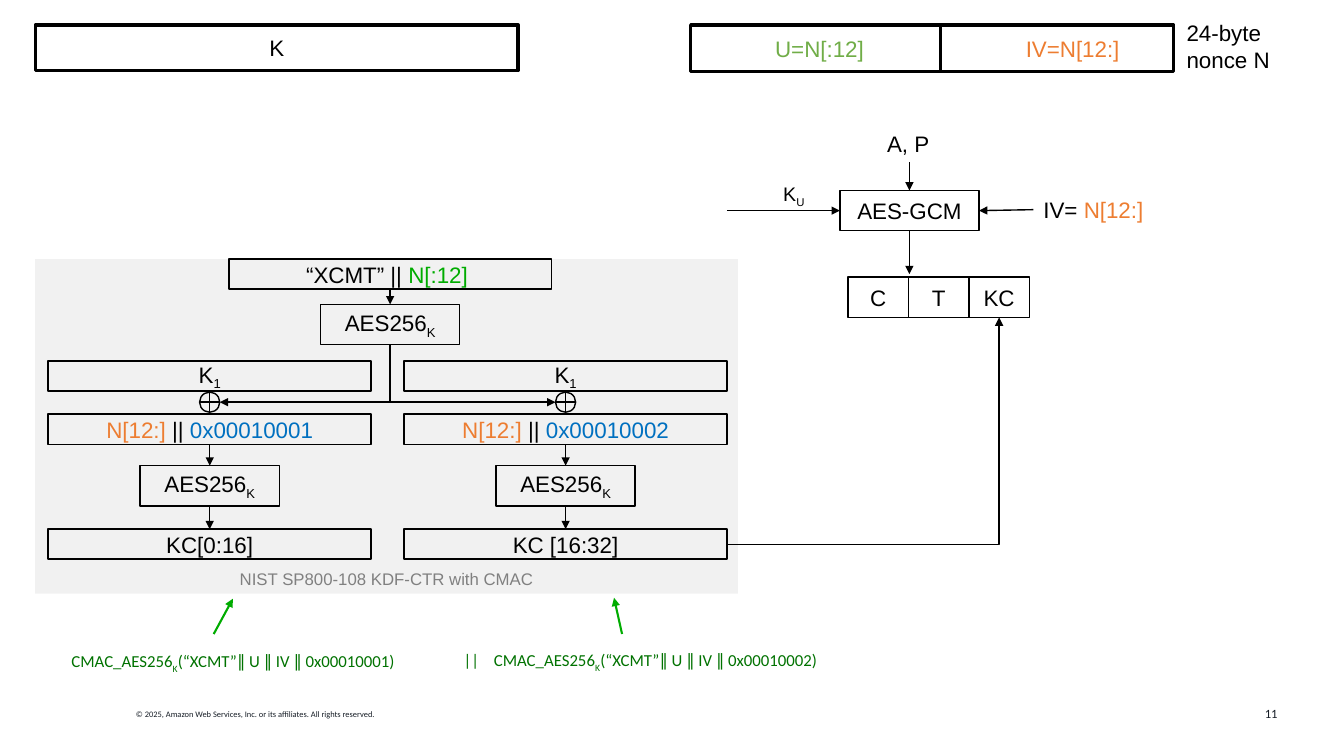
"""Build the slide on key commitment with a CMAC-based key derivation."""
from dataclasses import dataclass

from lxml import etree
from pptx import Presentation
from pptx import util as u
from pptx.dml.color import RGBColor
from pptx.enum import shapes, text
from pptx.oxml import ns


@dataclass(frozen=True)
class Theme:
    black: str = "000000"
    gray: str = "808080"
    ink: str = "161D26"
    orange: str = "ED7D31"
    olive: str = "70AD47"
    green: str = "00AC00"
    dark_green: str = "007200"
    blue: str = "0070C0"
    sans: str = "Arial"
    note: str = "Calibri"
    body: float = 16
    key: float = 14
    caption: float = 12
    number: float = 9
    legal: float = 6
    thick: float = 2.5
    medium: float = 1.25
    thin: float = 1


theme = Theme()
align, anchors = text.PP_ALIGN, text.MSO_ANCHOR
kinds, links = shapes.MSO_SHAPE, shapes.MSO_CONNECTOR

presentation = Presentation()
presentation.slide_width = u.Inches(13.33)
presentation.slide_height = u.Inches(7.5)
slide = presentation.slides.add_slide(presentation.slide_layouts[6])


def place(runs, at, *, kind=None, line=None, fill=None, size=theme.body, font=theme.sans,
          alignment=align.CENTER, anchor=anchors.MIDDLE, wrap=True, tabs=()):
    """Add a shape, or a text box when kind is None, holding (text, color, subscript) runs."""
    box = [u.Inches(value) for value in at]
    if kind is None:
        shape = slide.shapes.add_textbox(*box)
    else:
        shape = slide.shapes.add_shape(kind, *box)
        shape.shadow.inherit = False
        shape.fill.background()
        shape.line.fill.background()
    if line:
        shape.line.color.rgb = RGBColor.from_string(theme.black)
        shape.line.width = u.Pt(line)
    if fill:
        shape.fill.solid()
        shape.fill.fore_color.rgb = RGBColor.from_string(fill)
    frame = shape.text_frame
    frame.word_wrap = wrap
    frame.vertical_anchor = anchor
    paragraph = frame.paragraphs[0]
    paragraph.alignment = alignment
    if tabs:
        stops = etree.SubElement(paragraph._p.get_or_add_pPr(), ns.qn("a:tabLst"))
        for position, side in tabs:
            etree.SubElement(stops, ns.qn("a:tab"), pos=str(u.Inches(position)), algn=side)
    for words, color, *subscript in runs:
        if words == "\n":
            paragraph = frame.add_paragraph()
            paragraph.alignment = alignment
            continue
        run = paragraph.add_run()
        run.text = words
        run.font.name = font
        run.font.size = u.Pt(size)
        run.font.color.rgb = RGBColor.from_string(color)
        if subscript:
            run._r.get_or_add_rPr().set("baseline", "-25000")
    return shape


def connect(start, end, *, source=None, target=None, color=theme.black, width=theme.thin,
            arrow=True, elbow=False, rotation=0):
    """Draw a line; source and target are (shape, side) pairs to join."""
    kind = links.ELBOW if elbow else links.STRAIGHT
    connector = slide.shapes.add_connector(kind, *[u.Inches(v) for v in (*start, *end)])
    connector.line.color.rgb = RGBColor.from_string(color)
    connector.line.width = u.Pt(width)
    properties = connector._element.spPr
    if arrow:
        etree.SubElement(connector.line._get_or_add_ln(), ns.qn("a:tailEnd"), type="triangle")
    etree.SubElement(properties, ns.qn("a:effectLst"))
    if elbow:
        properties.find(ns.qn("a:prstGeom")).set("prst", "bentConnector2")
        properties.find(ns.qn("a:xfrm")).set("rot", str(rotation * 60000))
    if source:
        connector.begin_connect(*source)
    if target:
        connector.end_connect(*target)


rectangle = kinds.RECTANGLE
black = theme.black
cipher = [("AES256", black), ("K", black, True)]
cipher_width, cipher_height = 1.38, 0.4
block_width, block_height = 3.2, 0.3

place([("© 2025, Amazon Web Services, Inc. or its affiliates. All rights reserved.", theme.ink)],
      (1.25, 6.99, 2.88, 0.2), size=theme.legal, font=theme.note, alignment=align.LEFT,
      anchor=anchors.TOP, wrap=False)
place([("11", theme.ink)], (9.77, 6.88, 3, 0.4), size=theme.number, font=theme.note,
      alignment=align.RIGHT)

panel = place([("NIST SP800-108 KDF-CTR with CMAC", theme.gray)], (0.35, 2.57, 6.97, 3.32),
              kind=rectangle, fill=theme.gray, size=theme.caption, anchor=anchors.BOTTOM)
panel_color = panel._element.spPr.find(ns.qn("a:solidFill"))[0]
etree.SubElement(panel_color, ns.qn("a:alpha"), val="11000")

connect((9.33, 0.69), (9.33, 0.25), width=theme.thick, arrow=False)
place([("K", black)], (0.35, 0.25, 4.79, 0.45), kind=rectangle, line=theme.thick)
place([("\tU=N[:12]", theme.olive), ("\tIV=N[12:]", theme.orange)], (6.85, 0.25, 4.79, 0.46),
      kind=rectangle, line=theme.thick, alignment=align.LEFT,
      tabs=((1.18, "ctr"), (3.69, "ctr")))

labels = [
    ([("IV= ", black), ("N[12:]", theme.orange)], (10.25, 1.9, 1.25, 0.37), theme.body),
    ([("A, P", black)], (8.7, 1.24, 0.64, 0.37), theme.body),
    ([("24-byte", black), ("\n", black), ("nonce N", black)], (11.67, 0.14, 1.04, 0.64),
     theme.body),
    ([("K", black), ("U", black, True)], (7.67, 1.76, 0.43, 0.34), theme.key),
]
for runs, at, size in labels:
    place(runs, at, size=size, alignment=align.LEFT, anchor=anchors.TOP, wrap=False)

gcm = place([("AES-GCM", black)], (8.33, 1.89, cipher_width, cipher_height),
            kind=rectangle, line=theme.thin)
connect((10.25, 2.08), (9.71, 2.09), target=(gcm, 3))
connect((7.21, 2.09), (8.33, 2.09), target=(gcm, 1))
connect((9.02, 1.61), (9.02, 1.89), target=(gcm, 0))
connect((9.02, 2.29), (9.02, 2.72), source=(gcm, 2))
for index, name in enumerate(("C", "T", "KC")):
    place([(name, black)], (8.41 + 0.6 * index, 2.75, 0.6, 0.4), kind=rectangle, line=theme.thin)

root = 3.87
seed = place([("“XCMT” || ", black), ("N[:12] ", theme.green)],
             (root - block_width / 2, 2.57, block_width, block_height),
             kind=rectangle, line=theme.medium)
root_cipher = place(cipher, (root - cipher_width / 2, 3.02, cipher_width, cipher_height),
                    kind=rectangle, line=theme.thin)
connect((root, 2.87), (root, 3.02), source=(seed, 2), target=(root_cipher, 0))

branches = [(2.08, 1, "0x00010001", "KC[0:16]"), (5.61, -1, "0x00010002", "KC [16:32]")]
for center, direction, counter, output in branches:
    rows = [
        ([("K", black), ("1", black, True)], 3.58, block_width, block_height, theme.medium),
        ([("N[12:] ", theme.orange), ("|| ", black), (counter, theme.blue)],
         4.11, block_width, block_height, theme.medium),
        (cipher, 4.62, cipher_width, cipher_height, theme.thin),
        ([(output, black)], 5.25, block_width, block_height, theme.medium),
    ]
    _, counter_box, cipher_box, output_box = [
        place(runs, (center - width / 2, top, width, height), kind=rectangle, line=line)
        for runs, top, width, height, line in rows]
    place([], (center - 0.1, 3.89, 0.2, 0.2), kind=kinds.FLOWCHART_OR, line=theme.thin)
    connect((center, 4.41), (center, 4.62), source=(counter_box, 2), target=(cipher_box, 0))
    connect((center, 5.02), (center, 5.25), source=(cipher_box, 2), target=(output_box, 0))

    xor_edge = center + 0.1 * direction
    middle_x, middle_y = (root + xor_edge) / 2, (3.42 + 3.99) / 2
    half_drop, half_reach = direction * (3.99 - 3.42) / 2, abs(root - xor_edge) / 2
    connect((middle_x - half_drop, middle_y - half_reach),
            (middle_x + half_drop, middle_y + half_reach),
            elbow=True, rotation=90 if direction > 0 else 270)

connect((7.21, 5.4), (9.91, 3.15), elbow=True)

formulas = [
    ("CMAC_AES256", "0x00010001", (0.61, 6.41, 3.98, 0.3), (2.12, 6.29), (2.31, 5.94)),
    ("||\tCMAC_AES256", "0x00010002", (4.5, 6.4, 4.08, 0.3), (6.17, 6.29), (6.09, 5.93)),
]
for function, counter, at, start, end in formulas:
    place([(function, theme.dark_green), ("K", theme.dark_green, True),
           (f"(“XCMT”∥ U ∥ IV ∥ {counter})", theme.dark_green)], at, size=theme.caption,
          font=theme.note, alignment=align.LEFT, anchor=anchors.TOP, tabs=((0.3, "l"),))
    connect(start, end, color=theme.green, width=1.5)

presentation.save("out.pptx")
